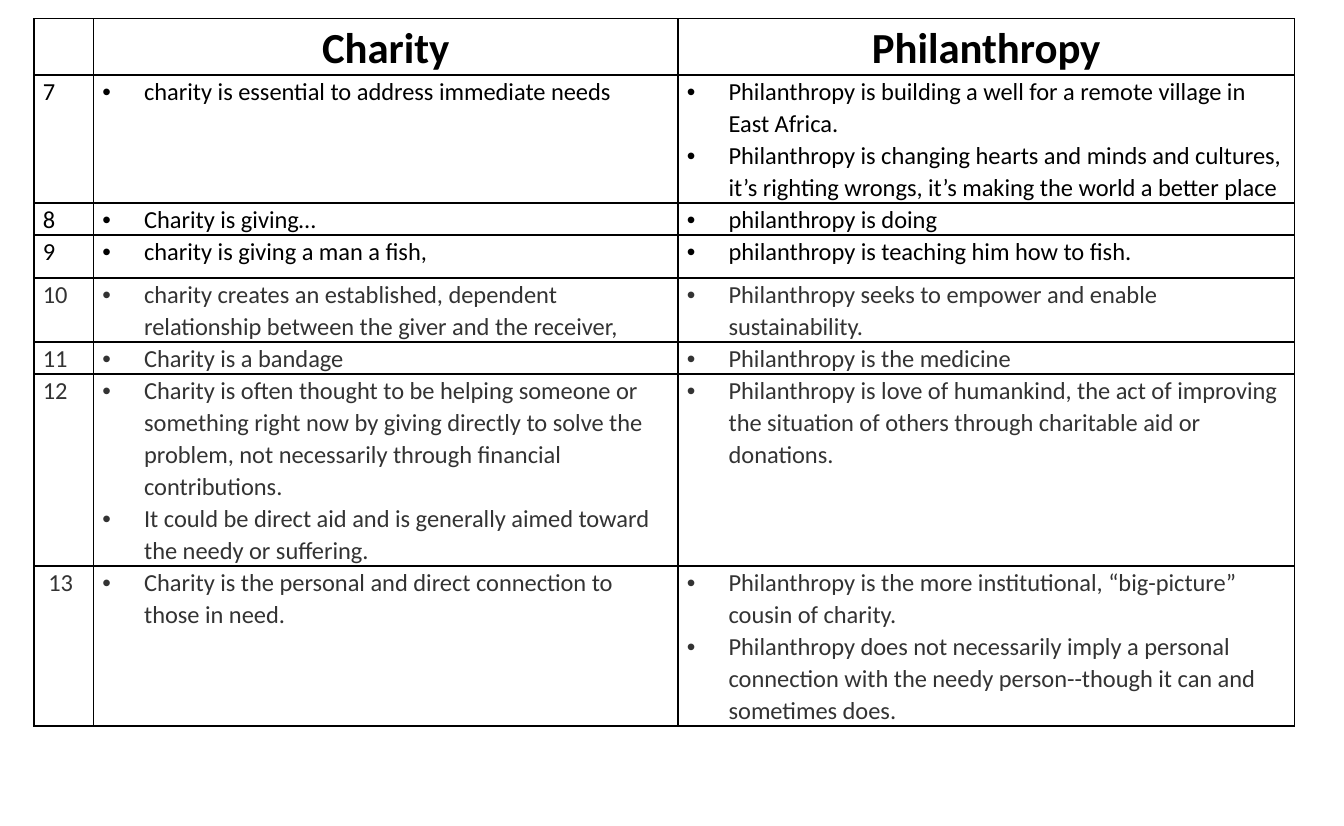
from pptx import Presentation
from pptx.dml.color import RGBColor
from pptx.enum.text import PP_ALIGN
from pptx.oxml.ns import qn
from pptx.util import Inches, Pt
from lxml.etree import SubElement

COLORS = {"black": "000000", "gray": "333333"}
FONT = "Calibri"
HANG = Inches(0.38)
COL_WIDTHS = [0.54, 5.31, 5.6]
HEADER_HEIGHT = 0.51
HEADERS = ["Charity", "Philanthropy"]
ROWS = [
    ("7", 1.16, "black",
     ["charity is essential to address immediate needs"],
     ["Philanthropy is building a well for a remote village in East Africa.",
      "Philanthropy is changing hearts and minds and cultures, it’s righting wrongs, "
      "it’s making the world a better place"]),
    ("8", 0.29, "black", ["Charity is giving…"], ["philanthropy is doing"]),
    ("9", 0.39, "black",
     ["charity is giving a man a fish,"],
     ["philanthropy is teaching him how to fish."]),
    ("10", 0.58, "gray",
     ["charity creates an established, dependent relationship between the giver "
      "and the receiver,"],
     ["Philanthropy seeks to empower and enable sustainability."]),
    ("11", 0.29, "gray", ["Charity is a bandage"], ["Philanthropy is the medicine"]),
    ("12", 1.74, "gray",
     ["Charity is often thought to be helping someone or something right now by giving "
      "directly to solve the problem, not necessarily through financial contributions.",
      "It could be direct aid and is generally aimed toward the needy or suffering."],
     ["Philanthropy is love of humankind, the act of improving the situation of others "
      "through charitable aid or donations."]),
    ("13", 1.45, "gray",
     ["Charity is the personal and direct connection to those in need."],
     ["Philanthropy is the more institutional, “big-picture” cousin of charity.",
      "Philanthropy does not necessarily imply a personal connection with the needy "
      "person--though it can and sometimes does."]),
]


def style_cell(cell):
    cell.margin_left = cell.margin_right = Inches(0.08)
    cell.margin_top = cell.margin_bottom = 0
    tcPr = cell._tc.get_or_add_tcPr()
    for side in ("lnL", "lnR", "lnT", "lnB"):
        ln = SubElement(tcPr, qn(f"a:{side}"), w=str(Pt(1)))
        fill = SubElement(ln, qn("a:solidFill"))
        SubElement(fill, qn("a:srgbClr"), val=COLORS["black"])
    cell.fill.background()


def add_text(p, text, color, size=16, bold=False):
    p.line_spacing = 1.07
    r = p.add_run()
    r.text = text
    r.font.name = FONT
    r.font.size = Pt(size)
    r.font.bold = bold
    r.font.color.rgb = RGBColor.from_string(COLORS[color])


def add_bullets(cell, items, color):
    tf = cell.text_frame
    for i, item in enumerate(items):
        p = tf.add_paragraph() if i else tf.paragraphs[0]
        add_text(p, item, color)
        pPr = p._p.get_or_add_pPr()
        pPr.set("marL", str(HANG))
        pPr.set("indent", str(-HANG))
        SubElement(pPr, qn("a:buFont"), typeface="Arial")
        SubElement(pPr, qn("a:buChar"), char="•")


def add_comparison(s, left, top):
    heights = [HEADER_HEIGHT] + [row[1] for row in ROWS]
    frame = s.shapes.add_table(len(heights), len(COL_WIDTHS), Inches(left), Inches(top),
                               Inches(sum(COL_WIDTHS)), Inches(sum(heights)))
    table = frame.table
    table.first_row = table.horz_banding = False
    for col, width in zip(table.columns, COL_WIDTHS):
        col.width = Inches(width)
    for row, height in zip(table.rows, heights):
        row.height = Inches(height)
    for cell in table.iter_cells():
        style_cell(cell)
    for c, header in enumerate(HEADERS, 1):
        p = table.cell(0, c).text_frame.paragraphs[0]
        p.alignment = PP_ALIGN.CENTER
        add_text(p, header, "black", 28, True)
    for r, (number, _, color, *columns) in enumerate(ROWS, 1):
        add_text(table.cell(r, 0).text_frame.paragraphs[0], number, color)
        for c, items in enumerate(columns, 1):
            add_bullets(table.cell(r, c), items, color)
    last_number = table.cell(len(ROWS), 0).text_frame.paragraphs[0]
    last_number._p.get_or_add_pPr().set("marL", str(Inches(0.05)))


def main():
    prs = Presentation()
    prs.slide_width = Inches(12.21)
    prs.slide_height = Inches(7.5)
    s = prs.slides.add_slide(prs.slide_layouts[6])
    add_comparison(s, 0.31, 0.17)
    prs.save("out.pptx")


if __name__ == "__main__":
    main()
